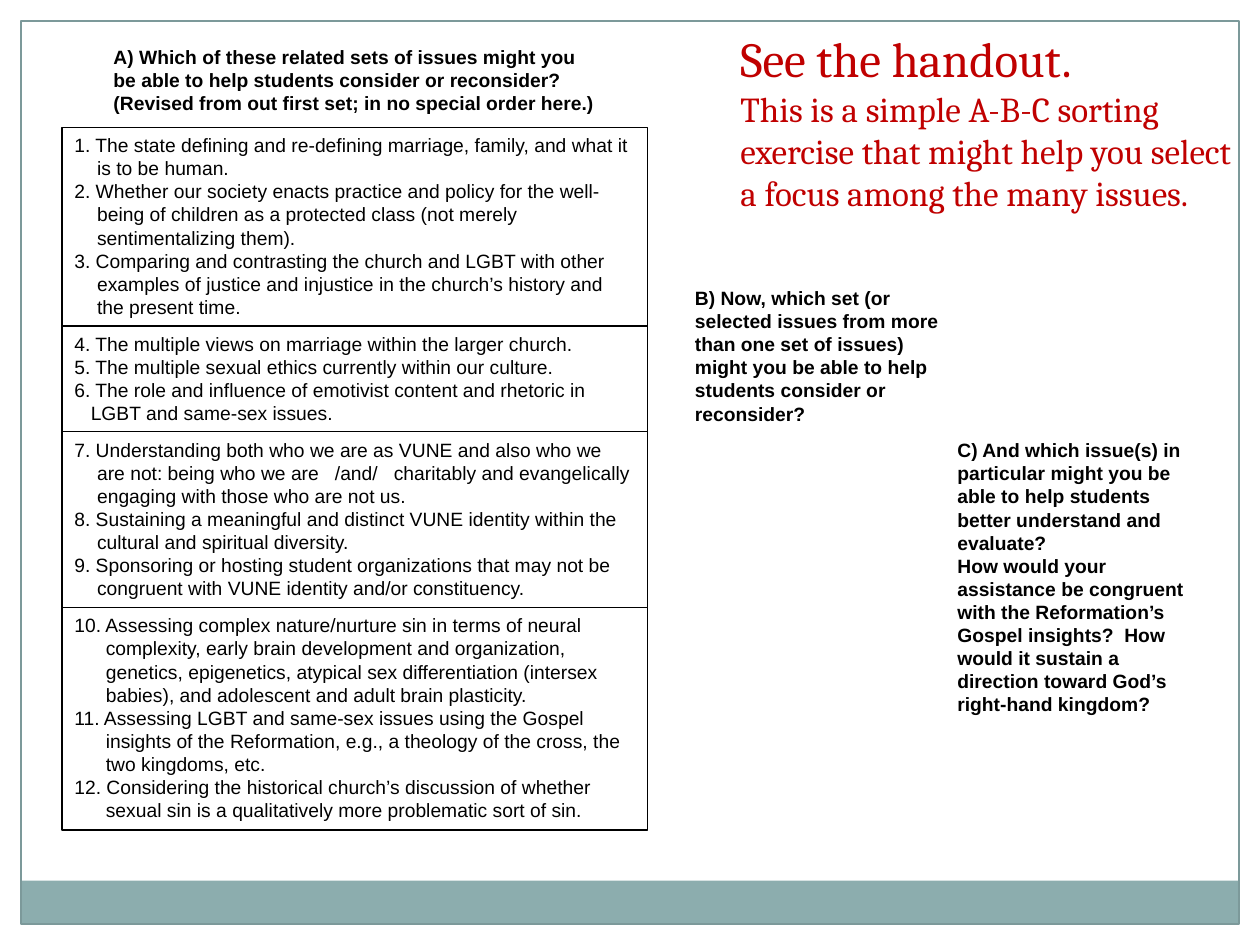
from pptx import Presentation
from pptx.dml.color import RGBColor
from pptx.enum import shapes, text
from pptx.util import Pt

WHITE = RGBColor(0xFF, 0xFF, 0xFF)
BLACK = RGBColor(0, 0, 0)
RED = RGBColor(0xC0, 0, 0)
TEAL = RGBColor(0x8C, 0xAD, 0xAE)
EDGE = RGBColor(0x7C, 0x99, 0x9A)

TITLE = ("See the handout.\vThis is a simple A-B-C sorting exercise that "
         "might help you select a focus among the many issues.")
ASK_A = ["A) Which of these related sets of issues might you be able to help "
         "students consider or reconsider? (Revised from out first set; in no "
         "special order here.)"]
ASK_B = ["B) Now, which set (or selected issues from more than one set of "
         "issues) might you be able to help students consider or reconsider?"]
ASK_C = ["C) And which issue(s) in particular might you be able to help "
         "students better understand and evaluate?",
         "How would your assistance be congruent with the Reformation’s Gospel "
         "insights?  How would it sustain a direction toward God’s right-hand "
         "kingdom?"]
SETS = [
    (113.6, 13, [
        "1. The state defining and re-defining marriage, family, and what it "
        "is to be human.",
        "2. Whether our society enacts practice and policy for the well-being "
        "of children as a protected class (not merely sentimentalizing them).",
        "3. Comparing and contrasting the church and LGBT with other examples "
        "of justice and injustice in the church’s history and the present "
        "time."]),
    (60.4, 9.4, [
        "4. The multiple views on marriage within the larger church.",
        "5. The multiple sexual ethics currently within our culture.",
        "6. The role and influence of emotivist content and rhetoric in LGBT "
        "and same-sex issues."]),
    (100.4, 13, [
        "7. Understanding both who we are as VUNE and also who we are not: "
        "being who we are   /and/   charitably and evangelically engaging "
        "with those who are not us.",
        "8. Sustaining a meaningful and distinct VUNE identity within the "
        "cultural and spiritual diversity.",
        "9. Sponsoring or hosting student organizations that may not be "
        "congruent with VUNE identity and/or constituency."]),
    (127.2, 18, [
        "10. Assessing complex nature/nurture sin in terms of neural "
        "complexity, early brain development and organization, genetics, "
        "epigenetics, atypical sex differentiation (intersex babies), and "
        "adolescent and adult brain plasticity.",
        "11. Assessing LGBT and same-sex issues using the Gospel insights of "
        "the Reformation, e.g., a theology of the cross, the two kingdoms, "
        "etc.",
        "12. Considering the historical church’s discussion of whether sexual "
        "sin is a qualitatively more problematic sort of sin."]),
]


def panel(slide, box, fill=None, line=None):
    shape = slide.shapes.add_shape(shapes.MSO_SHAPE.RECTANGLE, *map(Pt, box))
    shape.shadow.inherit = False
    if fill is None:
        shape.fill.background()
    else:
        shape.fill.solid()
        shape.fill.fore_color.rgb = fill
    if line is None:
        shape.line.fill.background()
    else:
        shape.line.color.rgb = line
        shape.line.width = Pt(0.75)
    return shape


def style(run, size, face, color, bold=False):
    run.font.size = Pt(size)
    run.font.name = face
    run.font.color.rgb = color
    run.font.bold = bold


def block(slide, box, lines, line=None, bold=False, hang=0):
    frame = panel(slide, box, WHITE, line).text_frame
    frame.word_wrap = True
    frame.vertical_anchor = text.MSO_ANCHOR.TOP
    frame.text = "\n".join(lines)
    for para in frame.paragraphs:
        para.alignment = text.PP_ALIGN.LEFT
        if hang:
            props = para._p.get_or_add_pPr()
            props.set("marL", str(Pt(hang)))
            props.set("indent", str(-Pt(hang)))
        for run in para.runs:
            style(run, 11, "Arial", BLACK, bold)


def border(slide, box):
    left, top, wide, high = box
    edge = 12
    for side in ((left, top, wide, edge),
                 (left + wide - edge, top, edge, high),
                 (left, top, edge, high)):
        panel(slide, side, WHITE)
    inner = wide - 2 * edge
    panel(slide, (left + edge, top + 503.3, inner, 24.5), TEAL)
    panel(slide, (left + edge, top + edge, inner, 516), line=EDGE)


def issues(slide, box):
    left, top, wide = box
    block(slide, (left + 22.4, top, 291, 50), ASK_A, bold=True)
    top += 50.4
    for high, hang, lines in SETS:
        block(slide, (left, top, wide, high), lines, BLACK, hang=hang)
        top += high


def title(slide, box):
    frame = slide.shapes.add_textbox(*map(Pt, box)).text_frame
    frame.word_wrap = True
    para = frame.paragraphs[0]
    para.text = TITLE
    for run, size in zip(para.runs, (28, 20)):
        style(run, size, "Cambria", RED)


def main():
    deck = Presentation()
    deck.slide_width, deck.slide_height = Pt(720), Pt(540)
    slide = deck.slides.add_slide(deck.slide_layouts[6])
    border(slide, (0, 0, 720, 540))
    issues(slide, (35.4, 22.3, 334.6))
    block(slide, (390, 160, 159, 70.6), ASK_B, bold=True)
    block(slide, (540, 247, 144, 149), ASK_C, bold=True)
    title(slide, (416, 13, 304, 138))
    deck.save("out.pptx")


if __name__ == "__main__":
    main()
